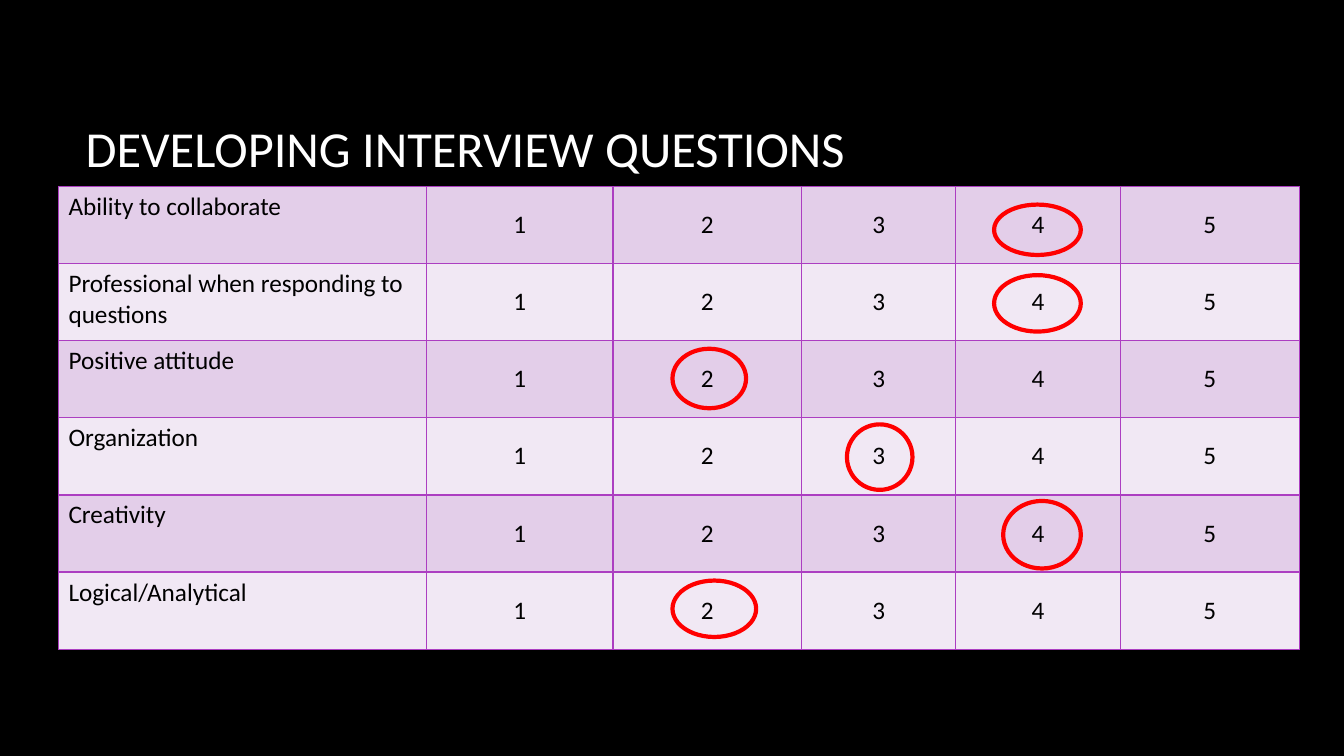
from lxml import etree
from pptx import Presentation
from pptx.dml.color import RGBColor
from pptx.enum.shapes import MSO_SHAPE
from pptx.enum.text import MSO_ANCHOR, PP_ALIGN
from pptx.oxml import parse_xml
from pptx.oxml.ns import nsdecls
from pptx.util import Inches, Pt

OVAL = MSO_SHAPE.OVAL
TOP, MIDDLE = MSO_ANCHOR.TOP, MSO_ANCHOR.MIDDLE
LEFT, CENTER = PP_ALIGN.LEFT, PP_ALIGN.CENTER

COLORS = {
    "back": "000000", "title": "FFFFFF", "text": "000000",
    "dark": "E3CEE9", "light": "F1E8F4", "grid": "AC3EC1", "mark": "FF0000",
}
TRAITS = [
    "Ability to collaborate",
    "Professional when responding to questions",
    "Positive attitude",
    "Organization",
    "Creativity",
    "Logical/Analytical",
]
WIDTHS = [3.65, 1.85, 1.87, 1.53, 1.63, 1.78]
MARKS = [
    (9.86, 2.03, 0.86, 0.5),
    (9.86, 2.73, 0.86, 0.56),
    (6.67, 3.46, 0.73, 0.59),
    (8.4, 4.21, 0.65, 0.65),
    (9.95, 4.97, 0.77, 0.67),
    (6.67, 5.76, 0.83, 0.56),
]


def color(name):
    return RGBColor.from_string(COLORS[name])


class Board:
    font = "Calibri"

    def __init__(self, slide):
        self.slide = slide
        fill = slide.background.fill
        fill.solid()
        fill.fore_color.rgb = color("back")

    def label(self, frame, text, size, tint, align=LEFT):
        para = frame.paragraphs[0]
        para.alignment = align
        run = para.add_run()
        run.text = text
        run.font.name = self.font
        run.font.size = Pt(size)
        run.font.color.rgb = color(tint)

    def title(self, text, *box):
        frame = self.slide.shapes.add_textbox(*map(Inches, box)).text_frame
        frame.word_wrap = True
        frame.vertical_anchor = MIDDLE
        self.label(frame, text, 36, "title")

    def border(self, cell):
        props = cell._tc.get_or_add_tcPr()
        for side in "LRTB":
            line = parse_xml(f'<a:ln{side} {nsdecls("a")} w="{Pt(1)}"/>')
            fill = etree.SubElement(line, "{%s}solidFill" % line.nsmap["a"])
            etree.SubElement(fill, "{%s}srgbClr" % line.nsmap["a"], val=COLORS["grid"])
            props.append(line)

    def table(self, rows, widths, left, top, height):
        box = map(Inches, (left, top, sum(widths), height))
        grid = self.slide.shapes.add_table(len(rows), len(widths), *box).table
        for col, width in zip(grid.columns, widths):
            col.width = Inches(width)
        for r, row in enumerate(rows):
            for c, text in enumerate(row):
                cell = grid.cell(r, c)
                self.border(cell)
                cell.fill.solid()
                cell.fill.fore_color.rgb = color("light" if r % 2 else "dark")
                cell.vertical_anchor = MIDDLE if c else TOP
                self.label(cell.text_frame, text, 18, "text", CENTER if c else LEFT)

    def ring(self, *box):
        shape = self.slide.shapes.add_shape(OVAL, *map(Inches, box))
        shape.shadow.inherit = False
        shape.fill.background()
        shape.line.color.rgb = color("mark")
        shape.line.width = Pt(3)


def main():
    deck = Presentation()
    deck.slide_width, deck.slide_height = Inches(13.33), Inches(7.5)
    board = Board(deck.slides.add_slide(deck.slide_layouts[6]))
    board.title("DEVELOPING INTERVIEW QUESTIONS", 0.75, 0.67, 11.08, 1.59)
    rows = [[trait, *"12345"] for trait in TRAITS]
    board.table(rows, WIDTHS, 0.58, 1.85, 4.59)
    for box in MARKS:
        board.ring(*box)
    deck.save("out.pptx")


if __name__ == "__main__":
    main()
